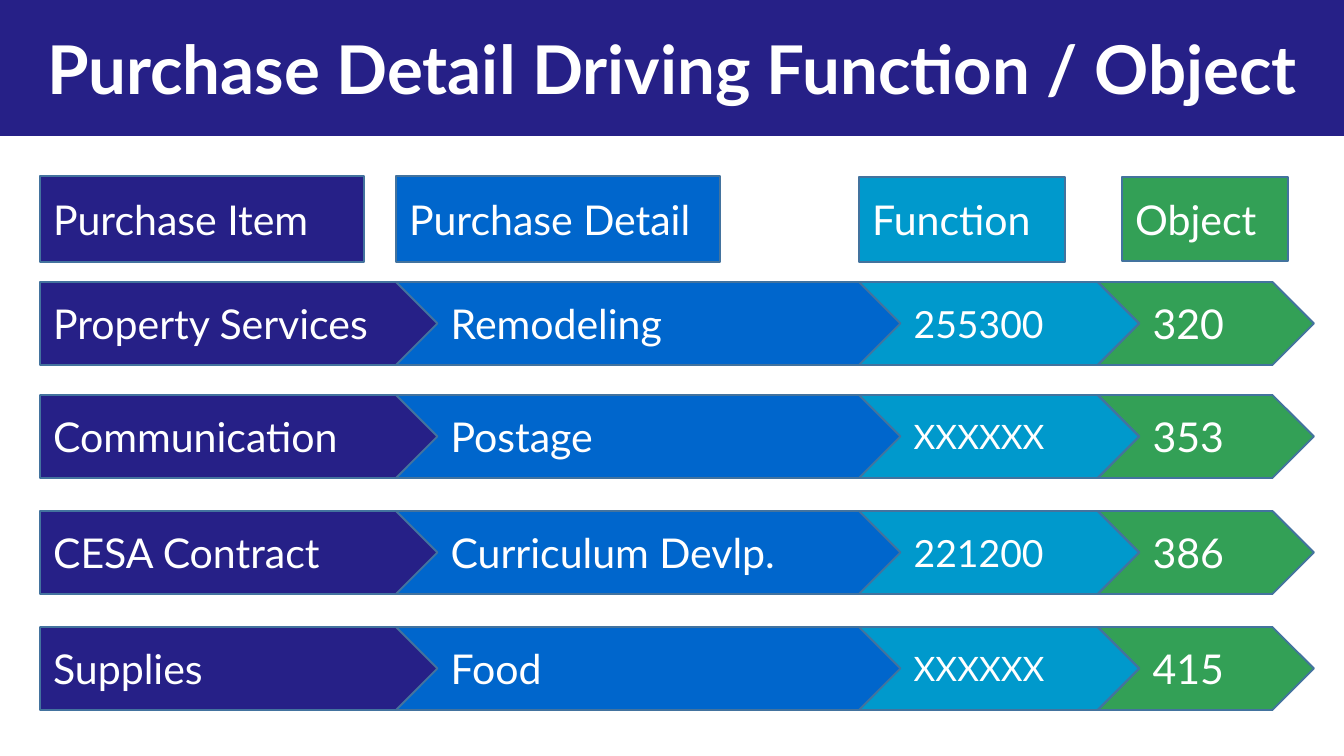
from pptx import Presentation
from pptx.dml.color import RGBColor
from pptx.enum.shapes import MSO_SHAPE
from pptx.enum.text import MSO_ANCHOR, MSO_AUTO_SIZE, PP_ALIGN
from pptx.util import Pt

RECTANGLE = MSO_SHAPE.RECTANGLE
PENTAGON = MSO_SHAPE.PENTAGON
CHEVRON = MSO_SHAPE.CHEVRON
MIDDLE = MSO_ANCHOR.MIDDLE
NO_AUTOFIT = MSO_AUTO_SIZE.NONE
LEFT, CENTER = PP_ALIGN.LEFT, PP_ALIGN.CENTER

SLIDE_WIDTH, SLIDE_HEIGHT = 1344, 756
EMU_PER_PX = 9144000 / SLIDE_WIDTH
NAVY, BLUE, CYAN, GREEN = "262087", "0066CC", "0099CC", "33A056"
WHITE, OUTLINE = "FFFFFF", "43739E"
UNKNOWN_CODE = "XXXXXX"

HEADER_BOXES = [
    ("Purchase Item", NAVY, (0, 0, 324, 86)),
    ("Purchase Detail", BLUE, (356, 0, 324, 86)),
    ("Function", CYAN, (819, 1, 206, 85)),
    ("Object", GREEN, (1082, 1, 166, 84)),
]
ROW_STEPS = [
    (PENTAGON, NAVY, 0, 403),
    (CHEVRON, BLUE, 356, 519),
    (CHEVRON, GREEN, 1058, 216),
    (CHEVRON, CYAN, 819, 280),
]
PURCHASES = [
    (282, "Property Services", "Remodeling", "320", "255300"),
    (395, "Communication", "Postage", "353", UNKNOWN_CODE),
    (511, "CESA Contract", "Curriculum Devlp.", "386", "221200"),
    (627, "Supplies", "Food", "415", UNKNOWN_CODE),
]


def px(length):
    """Turn pixels into EMU."""
    return round(length * EMU_PER_PX)


def color(hex_value):
    """Turn a hex string into a colour."""
    return RGBColor.from_string(hex_value)


def fill_shape(shape, hex_value):
    """Give a shape a solid fill."""
    shape.fill.solid()
    shape.fill.fore_color.rgb = color(hex_value)


def write_text(shape, wording, size, bold=False, alignment=LEFT):
    """Write one vertically centred white line into a shape."""
    frame = shape.text_frame
    frame_format = {"word_wrap": True, "auto_size": NO_AUTOFIT, "vertical_anchor": MIDDLE}
    for attribute, value in frame_format.items():
        setattr(frame, attribute, value)
    paragraph = frame.paragraphs[0]
    paragraph.alignment = alignment
    run = paragraph.add_run()
    run.text = wording
    for attribute, value in {"name": "Lato", "size": Pt(size), "bold": bold}.items():
        setattr(run.font, attribute, value)
    run.font.color.rgb = color(WHITE)


def add_label(slide, kind, box, fill, wording, size=22):
    """Add an outlined shape with its label."""
    label = slide.shapes.add_shape(kind, *map(px, box))
    label.shadow.inherit = False
    fill_shape(label, fill)
    label.line.color.rgb = color(OUTLINE)
    label.line.width = Pt(1)
    write_text(label, wording, size)


def add_title(slide, box, wording):
    """Place the title band."""
    title = slide.shapes.title
    for attribute, length in zip(("left", "top", "width", "height"), box):
        setattr(title, attribute, px(length))
    fill_shape(title, NAVY)
    write_text(title, wording, 36, bold=True, alignment=CENTER)


def add_headers(slide, left, top):
    """Place the column headings from the given corner."""
    for wording, fill, (x, y, width, height) in HEADER_BOXES:
        add_label(slide, RECTANGLE, (left + x, top + y, width, height), fill, wording)


def add_purchase_row(slide, left, top, height, wordings):
    """Place one purchase as a chain of arrows."""
    for (kind, fill, x, width), wording in zip(ROW_STEPS, wordings):
        size = 22
        if fill == CYAN:
            size = 18 if wording == UNKNOWN_CODE else 20
        add_label(slide, kind, (left + x, top, width, height), fill, wording, size)


def main():
    """Build and save the slide."""
    deck = Presentation()
    deck.slide_width, deck.slide_height = px(SLIDE_WIDTH), px(SLIDE_HEIGHT)
    slide = deck.slides.add_slide(deck.slide_layouts[5])
    add_title(slide, (0, 0, SLIDE_WIDTH, 136), "Purchase Detail Driving Function / Object")
    add_headers(slide, 40, 176)
    for top, *wordings in PURCHASES:
        add_purchase_row(slide, 40, top, 83, wordings)
    deck.save("out.pptx")


if __name__ == "__main__":
    main()
